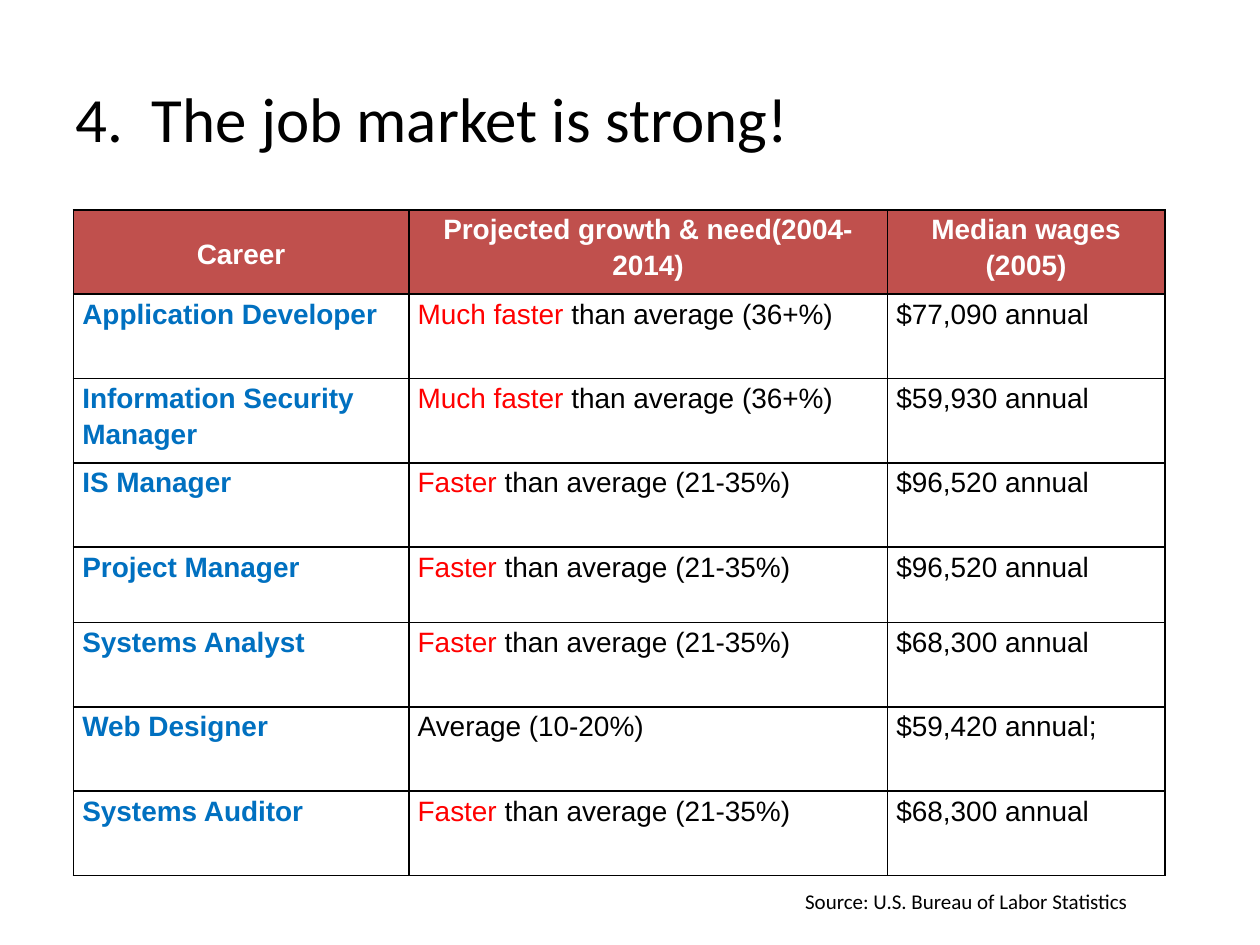
from pptx import Presentation
from pptx.dml.color import RGBColor
from pptx.enum.text import MSO_ANCHOR as Anchor, PP_ALIGN as Align
from pptx.oxml import parse_xml
from pptx.oxml.ns import nsdecls
from pptx.util import Cm, Pt

BLACK, WHITE, RED, BLUE, BRICK = "000000", "FFFFFF", "FF0000", "0070C0", "C0504D"
COLUMN_WIDTHS = (6.76, 9.65, 5.59)
ROW_HEIGHTS = (1.7, 1.7, 1.7, 1.7, 1.52, 1.7, 1.7, 1.7)
HEADERS = ("Career", "Projected growth & need(2004-2014)", "Median wages (2005)")
# Career, highlighted growth, rest of growth, wage
CAREERS = (
    ("Application Developer", "Much faster ", "than average (36+%)", "$77,090 annual"),
    ("Information Security Manager", "Much faster ", "than average (36+%)", "$59,930 annual"),
    ("IS Manager", "Faster ", "than average (21-35%)", "$96,520 annual"),
    ("Project Manager", "Faster ", "than average (21-35%)", "$96,520 annual"),
    ("Systems Analyst", "Faster ", "than average (21-35%)", "$68,300 annual"),
    ("Web Designer", "", "Average (10-20%)", "$59,420 annual;"),
    ("Systems Auditor", "Faster ", "than average (21-35%)", "$68,300 annual"),
)


def color(hex_string):
    return RGBColor.from_string(hex_string)


def set_attributes(target, **values):
    for name, value in values.items():
        setattr(target, name, value)


def add_run(paragraph, text, hex_color, **font_values):
    run = paragraph.add_run()
    run.text = text
    set_attributes(run.font, **font_values)
    run.font.color.rgb = color(hex_color)


def add_borders(cell):
    properties = cell._tc.get_or_add_tcPr()
    for index, side in enumerate(("lnL", "lnR", "lnT", "lnB")):
        properties.insert(index, parse_xml(
            f'<a:{side} {nsdecls("a")} w="12700"><a:solidFill>'
            f'<a:srgbClr val="{BLACK}"/></a:solidFill></a:{side}>'))


def fill_cell(cell, runs, bold=False, alignment=Align.LEFT, space_after=0,
              anchor=Anchor.TOP, fill=None):
    set_attributes(cell, margin_left=Cm(0.18), margin_right=Cm(0.18),
                   margin_top=0, margin_bottom=0, vertical_anchor=anchor)
    if fill:
        cell.fill.solid()
        cell.fill.fore_color.rgb = color(fill)
    else:
        cell.fill.background()
    add_borders(cell)
    paragraph = cell.text_frame.paragraphs[0]
    set_attributes(paragraph, alignment=alignment, line_spacing=1.15,
                   space_after=Pt(space_after))
    for text, hex_color in runs:
        if text:
            add_run(paragraph, text, hex_color, name="Arial", size=Pt(16), bold=bold)


def place_title(slide, left, top, width, height):
    title = slide.shapes.title
    set_attributes(title, left=Cm(left), top=Cm(top), width=Cm(width), height=Cm(height))
    title.text_frame.vertical_anchor = Anchor.TOP
    paragraph = title.text_frame.paragraphs[0]
    paragraph.alignment = Align.LEFT
    add_run(paragraph, "4.  The job market is strong!", BLACK, name="Calibri", size=Pt(36))


def place_career_table(slide, left, top):
    table = slide.shapes.add_table(
        len(ROW_HEIGHTS), len(COLUMN_WIDTHS), Cm(left), Cm(top),
        Cm(sum(COLUMN_WIDTHS)), Cm(sum(ROW_HEIGHTS))).table
    table.horz_banding = False
    for column, width in zip(table.columns, COLUMN_WIDTHS):
        column.width = Cm(width)
    for row, height in zip(table.rows, ROW_HEIGHTS):
        row.height = Cm(height)

    # Header row
    for index, header in enumerate(HEADERS):
        first = index == 0
        fill_cell(table.cell(0, index), [(header, WHITE)], bold=True,
                  alignment=Align.CENTER, fill=BRICK, space_after=10 if first else 0,
                  anchor=Anchor.MIDDLE if first else Anchor.TOP)

    # Career rows
    for index, (career, highlight, growth, wage) in enumerate(CAREERS, start=1):
        fill_cell(table.cell(index, 0), [(career, BLUE)], bold=True, space_after=10)
        fill_cell(table.cell(index, 1), [(highlight, RED), (growth, BLACK)])
        fill_cell(table.cell(index, 2), [(wage, BLACK)])


def place_source(slide, left, top, width, height):
    box = slide.shapes.add_textbox(Cm(left), Cm(top), Cm(width), Cm(height))
    box.text_frame.word_wrap = True
    paragraph = box.text_frame.paragraphs[0]
    paragraph.alignment = Align.CENTER
    add_run(paragraph, "Source: U.S. Bureau of Labor Statistics", BLACK,
            name="Calibri", size=Pt(12))


def main():
    presentation = Presentation()
    set_attributes(presentation, slide_width=Cm(25.4), slide_height=Cm(19.05))
    slide = presentation.slides.add_slide(presentation.slide_layouts[5])
    place_title(slide, 1.27, 1.47, 22.86, 3.18)
    place_career_table(slide, 1.48, 4.23)
    place_source(slide, 14.4, 17.78, 10.16, 0.84)
    presentation.save("out.pptx")


if __name__ == "__main__":
    main()
